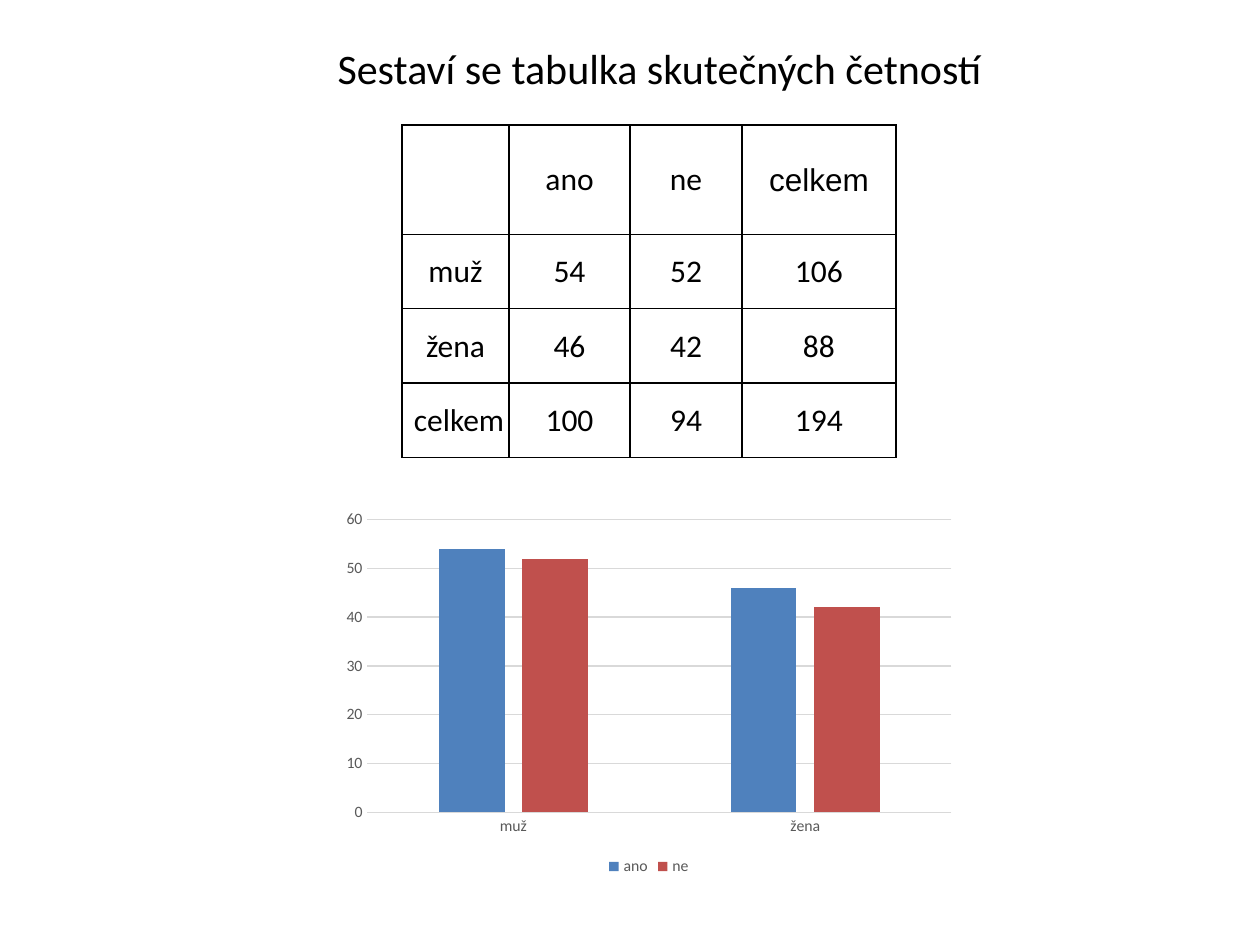
from dataclasses import dataclass

from lxml.etree import SubElement
from pptx import Presentation
from pptx.chart.data import CategoryChartData
from pptx.dml.color import RGBColor
from pptx.enum.chart import XL_CHART_TYPE, XL_LEGEND_POSITION, XL_TICK_MARK
from pptx.enum.text import MSO_ANCHOR, PP_ALIGN
from pptx.oxml.ns import qn
from pptx.util import Inches, Pt

BLACK = RGBColor(0, 0, 0)
GREY = RGBColor(0x59, 0x59, 0x59)
PALE = RGBColor(0xD9, 0xD9, 0xD9)
BLUE = RGBColor(0x4F, 0x81, 0xBD)
RED = RGBColor(0xC0, 0x50, 0x4D)
FONT = "Calibri"


@dataclass(frozen=True)
class Answer:
    name: str
    counts: tuple[int, ...]
    color: RGBColor


SEXES = ("muž", "žena")
ANSWERS = (Answer("ano", (54, 46), BLUE), Answer("ne", (52, 42), RED))
WIDTHS = (0.85, 0.96, 0.89, 1.22)
HEIGHTS = (0.87, 0.59, 0.59, 0.59)


def set_font(font, size: float, color: RGBColor, name: str = FONT) -> None:
    font.size = Pt(size)
    font.name = name
    font.color.rgb = color


def add_text(frame, text: str, size: float, name: str = FONT) -> None:
    line = frame.paragraphs[0]
    line.alignment = PP_ALIGN.CENTER
    run = line.add_run()
    run.text = text
    set_font(run.font, size, BLACK, name)


def add_title(slide) -> None:
    box = slide.shapes.add_textbox(Inches(0.47), Inches(0.29), Inches(9.53), Inches(0.5))
    box.text_frame.word_wrap = True
    add_text(box.text_frame, "Sestaví se tabulka skutečných četností", 24)


def add_border(cell) -> None:
    """Put a thin black line on all four sides, ahead of the cell's fill."""
    props = cell._tc.get_or_add_tcPr()
    for spot, side in enumerate(("lnL", "lnR", "lnT", "lnB")):
        line = SubElement(props, qn(f"a:{side}"), w=str(Pt(1)))
        fill = SubElement(line, qn("a:solidFill"))
        SubElement(fill, qn("a:srgbClr"), val=str(BLACK))
        props.insert(spot, line)


def count_rows() -> list[list[str]]:
    """Return the counts with their row and column totals, headings included."""
    rows = [["", *(answer.name for answer in ANSWERS), "celkem"]]
    counts = list(zip(*(answer.counts for answer in ANSWERS)))
    counts.append(tuple(sum(column) for column in zip(*counts)))
    for label, row in zip((*SEXES, " celkem"), counts):
        rows.append([label, *map(str, row), str(sum(row))])
    return rows


def add_counts(slide) -> None:
    frame = slide.shapes.add_table(
        len(HEIGHTS), len(WIDTHS), Inches(3.19), Inches(0.99),
        Inches(sum(WIDTHS)), Inches(sum(HEIGHTS)))
    table = frame.table
    table.first_row = table.horz_banding = False
    for column, width in zip(table.columns, WIDTHS):
        column.width = Inches(width)
    for row, height, texts in zip(table.rows, HEIGHTS, count_rows()):
        row.height = Inches(height)
        for cell, text in zip(row.cells, texts):
            cell.fill.background()
            add_border(cell)
            cell.vertical_anchor = MSO_ANCHOR.MIDDLE
            cell.margin_left = cell.margin_right = cell.margin_top = Inches(0.01)
            cell.margin_bottom = 0
            if text:
                add_text(cell.text_frame, text, 18, "Arial" if text == "celkem" else FONT)


def set_line(line, color: RGBColor) -> None:
    line.color.rgb = color
    line.width = Pt(0.75)


def add_bars(slide) -> None:
    data = CategoryChartData()
    data.categories = SEXES
    for answer in ANSWERS:
        data.add_series(answer.name, answer.counts)
    chart = slide.shapes.add_chart(
        XL_CHART_TYPE.COLUMN_CLUSTERED, Inches(2.65), Inches(3.99),
        Inches(5), Inches(3), data).chart
    chart.has_title = False
    set_font(chart.font, 10, BLACK)

    plot = chart.plots[0]
    plot.vary_by_categories = False
    plot.gap_width = 219
    plot.overlap = -27
    for bars, answer in zip(plot.series, ANSWERS):
        bars.format.fill.solid()
        bars.format.fill.fore_color.rgb = answer.color

    for axis in (chart.category_axis, chart.value_axis):
        axis.major_tick_mark = axis.minor_tick_mark = XL_TICK_MARK.NONE
        set_font(axis.tick_labels.font, 9, GREY)
    set_line(chart.category_axis.format.line, PALE)
    chart.value_axis.format.line.fill.background()
    chart.value_axis.minimum_scale = 0
    chart.value_axis.maximum_scale = 60
    chart.value_axis.major_unit = 10
    set_line(chart.value_axis.major_gridlines.format.line, PALE)

    chart.has_legend = True
    chart.legend.position = XL_LEGEND_POSITION.BOTTOM
    chart.legend.include_in_layout = False
    set_font(chart.legend.font, 9, GREY)


def main() -> None:
    deck = Presentation()
    deck.slide_width = Inches(10)
    deck.slide_height = Inches(7.5)
    slide = deck.slides.add_slide(deck.slide_layouts[6])
    add_counts(slide)
    add_title(slide)
    add_bars(slide)
    deck.save("out.pptx")


if __name__ == "__main__":
    main()
